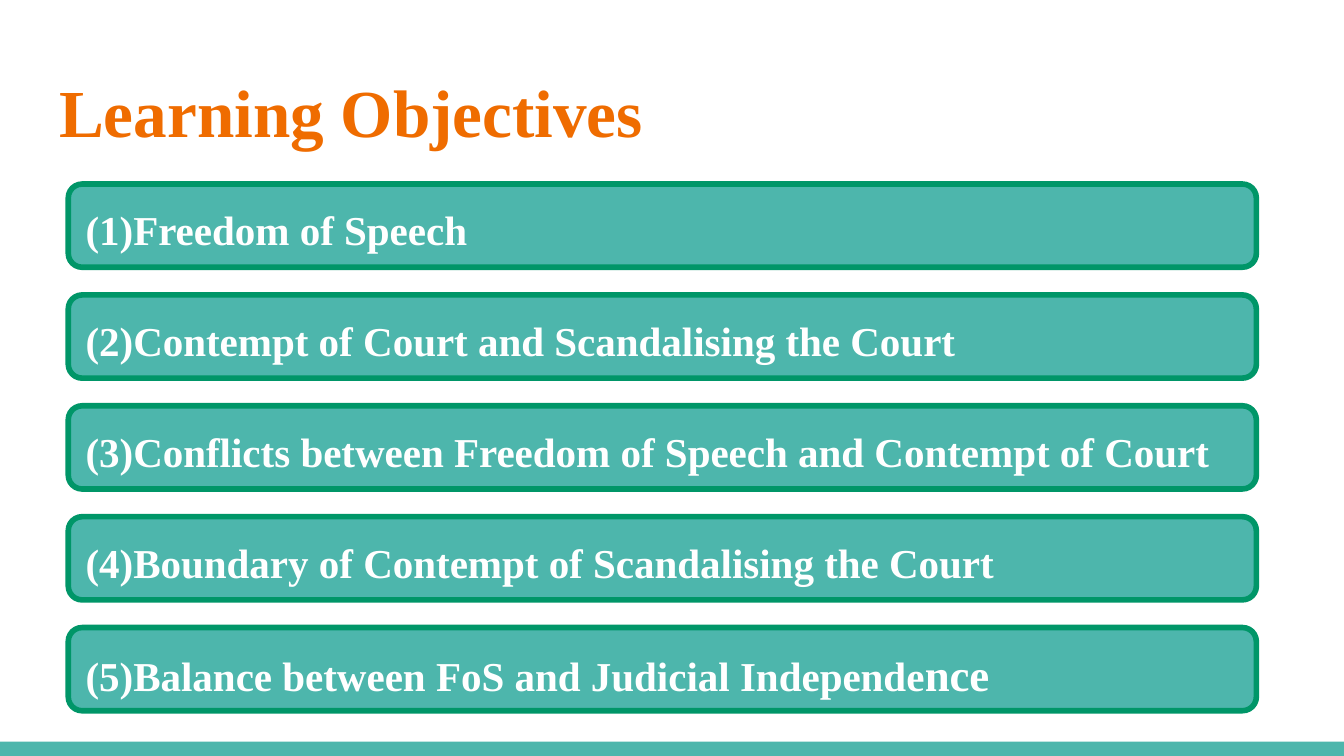
from dataclasses import dataclass

from pptx import Presentation
from pptx.dml.color import RGBColor
from pptx.enum.shapes import MSO_SHAPE as SHAPE
from pptx.enum.text import MSO_ANCHOR as ANCHOR, PP_ALIGN as ALIGN
from pptx.util import Pt


@dataclass(frozen=True)
class Theme:
    font: str = "Times New Roman"
    title_color: str = "EF6C00"
    fill: str = "4DB6AC"
    border: str = "009668"
    text_color: str = "FFFFFF"
    title_size: float = 36
    body_size: float = 22
    large_size: float = 24
    inset: float = 7.2
    line_spacing: float = 1.15


class SlideBuilder:
    def __init__(self, slide, theme):
        self.slide = slide
        self.theme = theme

    def add_text(self, sp, runs, color):
        """Fill a shape with one bold paragraph of (text, size) runs."""
        theme = self.theme
        tf = sp.text_frame
        tf.word_wrap = True
        tf.vertical_anchor = ANCHOR.MIDDLE
        tf.margin_left = tf.margin_right = Pt(theme.inset)
        tf.margin_top = tf.margin_bottom = Pt(theme.inset)
        p = tf.paragraphs[0]
        p.alignment = ALIGN.LEFT
        p.line_spacing = theme.line_spacing
        p.space_before = Pt(0)
        for text, size in runs:
            r = p.add_run()
            r.text = text
            r.font.name = theme.font
            r.font.size = Pt(size)
            r.font.bold = True
            r.font.color.rgb = RGBColor.from_string(color)

    def title(self, text, left, top, width, height):
        sp = self.slide.shapes.title
        sp.left, sp.top, sp.width, sp.height = map(Pt, (left, top, width, height))
        self.add_text(sp, [(text, self.theme.title_size)], self.theme.title_color)

    def block(self, kind, left, top, width, height):
        sp = self.slide.shapes.add_shape(kind, *map(Pt, (left, top, width, height)))
        sp.shadow.inherit = False
        sp.fill.solid()
        sp.fill.fore_color.rgb = RGBColor.from_string(self.theme.fill)
        sp.line.fill.background()
        return sp

    def card(self, runs, left, top, width, height):
        sp = self.block(SHAPE.FLOWCHART_ALTERNATE_PROCESS, left, top, width, height)
        sp.line.color.rgb = RGBColor.from_string(self.theme.border)
        sp.line.width = Pt(3)
        self.add_text(sp, runs, self.theme.text_color)


def main():
    theme = Theme()
    prs = Presentation()
    prs.slide_width, prs.slide_height = Pt(720), Pt(405)
    s = SlideBuilder(prs.slides.add_slide(prs.slide_layouts[5]), theme)

    s.block(SHAPE.RECTANGLE, 0, 397.4, 720, 7.6)
    s.title("Learning Objectives", 24.5, 28.1, 671, 55.4)

    body, large = theme.body_size, theme.large_size
    objectives = [
        [("Freedom of Speech", body)],
        [("Contempt of Court and Scandalising the Court", body)],
        [("Conflicts between Freedom of Speech and Contempt of Court", body)],
        [("Boundary of Contempt of Scandalising the Court", body)],
        [("Balance between FoS and Judicial Independe", body), ("nce", large)],
    ]
    first_top, pitch = 98.6, 59.4
    for i, (first, *rest) in enumerate(objectives):
        text, size = first
        numbered = (f"({i + 1}){text}", size)
        s.card([numbered, *rest], 36.6, first_top + i * pitch, 636.5, 44.6)

    prs.save("out.pptx")


if __name__ == "__main__":
    main()
